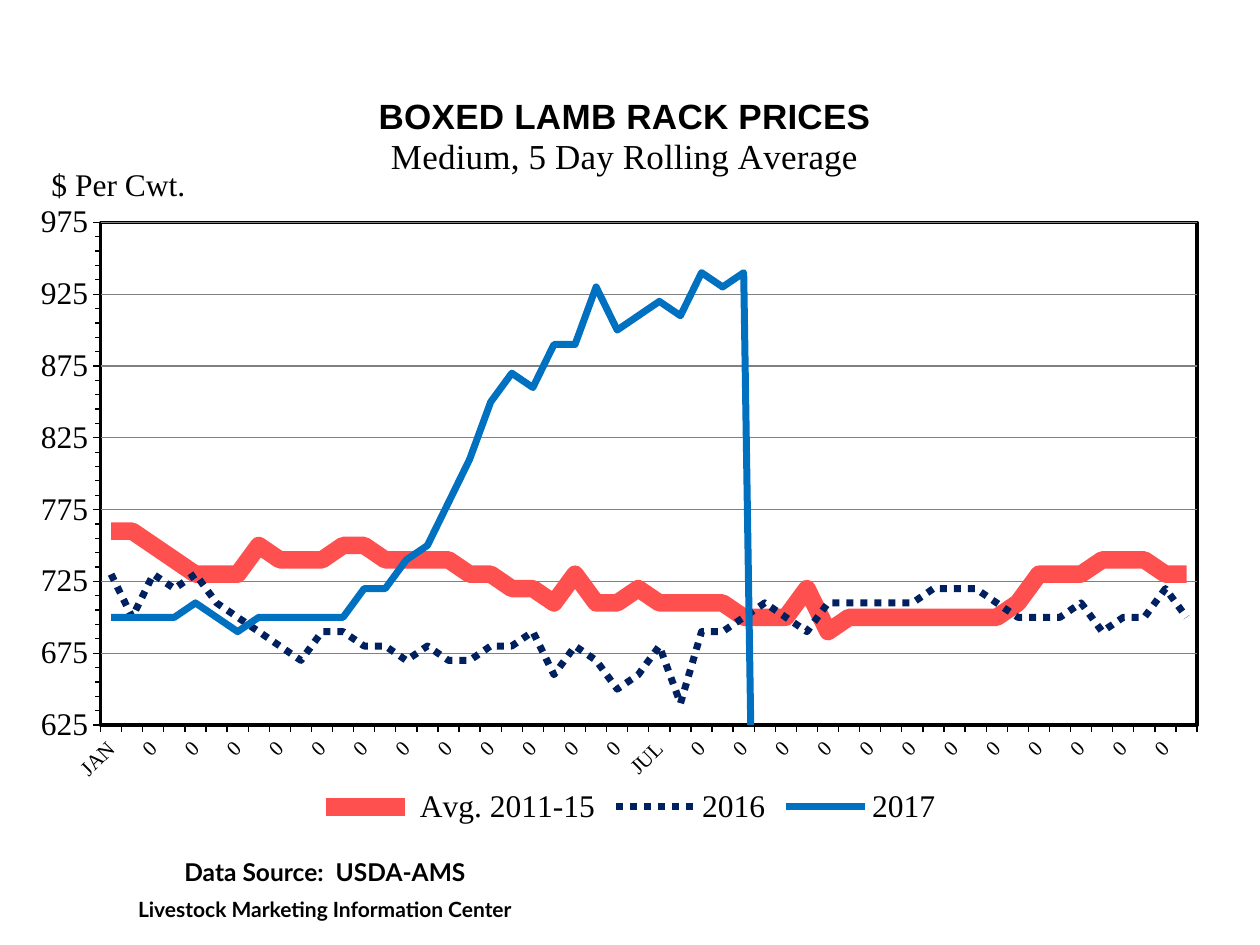
from dataclasses import dataclass

from lxml import etree
from pptx import Presentation
from pptx.chart.data import CategoryChartData
from pptx.dml.color import RGBColor
from pptx.enum.chart import XL_CHART_TYPE, XL_LEGEND_POSITION, XL_TICK_MARK
from pptx.enum.dml import MSO_LINE
from pptx.enum.text import PP_ALIGN
from pptx.oxml.ns import qn
from pptx.util import Inches, Pt

LINE = XL_CHART_TYPE.LINE
BOTTOM = XL_LEGEND_POSITION.BOTTOM
OUT, NONE = XL_TICK_MARK.OUTSIDE, XL_TICK_MARK.NONE
DOTS = MSO_LINE.ROUND_DOT
CENTER = PP_ALIGN.CENTER


@dataclass(frozen=True)
class Theme:
    ink: str = "000000"
    paper: str = "FFFFFF"
    grid: str = "808080"
    red: str = "FF5050"
    navy: str = "002060"
    blue: str = "0070C0"
    serif: str = "Times New Roman"
    sans: str = "Arial"
    note: str = "Lato"
    title: int = 20
    body: int = 18
    source: int = 14
    small: int = 12


THEME = Theme()

# Weekly prices, 52 weeks with quarter labels
WEEKS = ["0"] * 52
for week, month in zip(range(0, 52, 13), ("JAN", "APR", "JUL", "OCT")):
    WEEKS[week] = month

AVERAGE = [
    760, 760, 750, 740, 730, 730, 730, 750, 740, 740, 740, 750, 750,
    740, 740, 740, 740, 730, 730, 720, 720, 710, 730, 710, 710, 720,
    710, 710, 710, 710, 700, 700, 700, 720, 690, 700, 700, 700, 700,
    700, 700, 700, 700, 710, 730, 730, 730, 740, 740, 740, 730, 730]
LAST = [
    730, 700, 730, 720, 730, 710, 700, 690, 680, 670, 690, 690, 680,
    680, 670, 680, 670, 670, 680, 680, 690, 660, 680, 670, 650, 660,
    680, 640, 690, 690, 700, 710, 700, 690, 710, 710, 710, 710, 710,
    720, 720, 720, 710, 700, 700, 700, 710, 690, 700, 700, 720, 700]
THIS = [
    700, 700, 700, 700, 710, 700, 690, 700, 700, 700, 700, 700, 720,
    720, 740, 750, 780, 810, 850, 870, 860, 890, 890, 930, 900, 910,
    920, 910, 940, 930, 940]
THIS += [None] * (len(WEEKS) - len(THIS))

# Name, values, colour, width, dash
SERIES = [
    (" Avg. 2011-15", AVERAGE, THEME.red, 10, None),
    ("2016", LAST, THEME.navy, 4, DOTS),
    ("2017", THIS, THEME.blue, 4, None),
]


def style(font, size, name, color=THEME.ink, bold=False):
    font.size, font.name, font.bold = Pt(size), name, bold
    font.color.rgb = RGBColor.from_string(color)


def write(para, text, align=None, before=0, **look):
    run = para.add_run()
    run.text = text
    style(run.font, **look)
    para.alignment = align
    para.space_before = Pt(before)


def stroke(line, color, width, dash=None):
    line.color.rgb = RGBColor.from_string(color)
    line.width = Pt(width)
    if dash:
        line.dash_style = dash


def place(node, index, **marks):
    """Give a chart part a manual layout, in fractions of the chart."""
    for old in node.findall(qn("c:layout")):
        node.remove(old)
    layout = etree.Element(qn("c:layout"))
    manual = etree.SubElement(layout, qn("c:manualLayout"))
    for tag, val in marks.items():
        etree.SubElement(manual, qn("c:" + tag)).set("val", str(val))
    node.insert(index, layout)


class Deck:
    def __init__(self, theme):
        self.theme = theme
        self.prs = Presentation()
        self.prs.slide_width, self.prs.slide_height = Inches(10), Inches(7.5)
        self.slide = self.prs.slides.add_slide(self.prs.slide_layouts[6])

    def chart(self, box, weeks, series):
        data = CategoryChartData()
        data.categories = weeks
        for name, vals, *_ in series:
            data.add_series(name, vals)
        frame = self.slide.shapes.add_chart(LINE, *map(Inches, box), data)
        chart = frame.chart
        style(chart.font, self.theme.body, self.theme.serif)
        for item, (_, _, color, width, dash) in zip(chart.series, series):
            item.smooth = False
            stroke(item.format.line, color, width, dash)
        chart.plots[0].vary_by_categories = False
        chart.has_legend = True
        chart.legend.position = BOTTOM
        chart.legend.include_in_layout = False
        style(chart.legend.font, self.theme.body, self.theme.serif)
        return chart

    def area(self, chart):
        root = chart._chartSpace
        root.find(".//" + qn("c:dispBlanksAs")).set("val", "zero")
        plot = root.find(".//" + qn("c:plotArea"))
        place(plot, 0, layoutTarget="inner", xMode="edge", yMode="edge",
              x=0.065, y=0.185, w=0.9, h=0.674)
        props = etree.SubElement(plot, qn("c:spPr"))
        fill = etree.SubElement(props, qn("a:solidFill"))
        edge = etree.SubElement(props, qn("a:ln"), w=str(Pt(2)))
        for node, color in ((fill, self.theme.paper),
                            (etree.SubElement(edge, qn("a:solidFill")),
                             self.theme.ink)):
            etree.SubElement(node, qn("a:srgbClr"), val=color)

    def title(self, chart, head, sub):
        frame = chart.chart_title.text_frame
        write(frame.paragraphs[0], head, CENTER, size=self.theme.title,
              name=self.theme.sans, bold=True)
        write(frame.add_paragraph(), sub, CENTER, size=self.theme.title,
              name=self.theme.serif)
        chart.chart_title.include_in_layout = False
        place(chart.chart_title._element, 1, xMode="edge", yMode="edge",
              x=0.29, y=0.01)

    def axes(self, chart, unit):
        cat, val = chart.category_axis, chart.value_axis
        for axis, size in ((cat, self.theme.small), (val, self.theme.body)):
            axis.major_tick_mark = OUT
            stroke(axis.format.line, self.theme.ink, 0.75)
            style(axis.tick_labels.font, size, self.theme.serif)
        cat.minor_tick_mark, val.minor_tick_mark = NONE, OUT
        turn = cat._element.find(qn("c:txPr")).find(qn("a:bodyPr"))
        turn.set("rot", str(-45 * 60000))
        turn.set("vert", "horz")
        # Price scale
        val.minimum_scale, val.maximum_scale = 625, 975
        val.major_unit, val.minor_unit = 50, 10
        val.tick_labels.number_format = "General"
        val.tick_labels.number_format_is_linked = False
        val.has_major_gridlines = True
        stroke(val.major_gridlines.format.line, self.theme.grid, 0.75)
        # Unit label above the scale
        frame = val.axis_title.text_frame
        write(frame.paragraphs[0], unit, size=self.theme.body,
              name=self.theme.serif)
        turn = frame._txBody.find(qn("a:bodyPr"))
        turn.set("rot", "0")
        turn.set("vert", "horz")
        place(val.axis_title._element, 1, xMode="edge", yMode="edge",
              x=0.02, y=0.1)

    def note(self, box, lines):
        frame = self.slide.shapes.add_textbox(*map(Inches, box)).text_frame
        frame.word_wrap = True
        for i, (text, size, before) in enumerate(lines):
            para = frame.add_paragraph() if i else frame.paragraphs[0]
            write(para, text, CENTER, before, size=size,
                  name=self.theme.note, bold=True)


def main():
    deck = Deck(THEME)
    # Price chart
    chart = deck.chart((0.17, 0.67, 9.67, 5.92), WEEKS, SERIES)
    deck.title(chart, "BOXED LAMB RACK PRICES", "Medium, 5 Day Rolling Average")
    deck.axes(chart, "$ Per Cwt.")
    deck.area(chart)
    # Source note
    deck.note((0.33, 6.75, 4.5, 0.64), [
        ("Data Source:  USDA-AMS", THEME.source, 0),
        ("Livestock Marketing Information Center", THEME.small, 6)])
    deck.prs.save("out.pptx")


if __name__ == "__main__":
    main()
